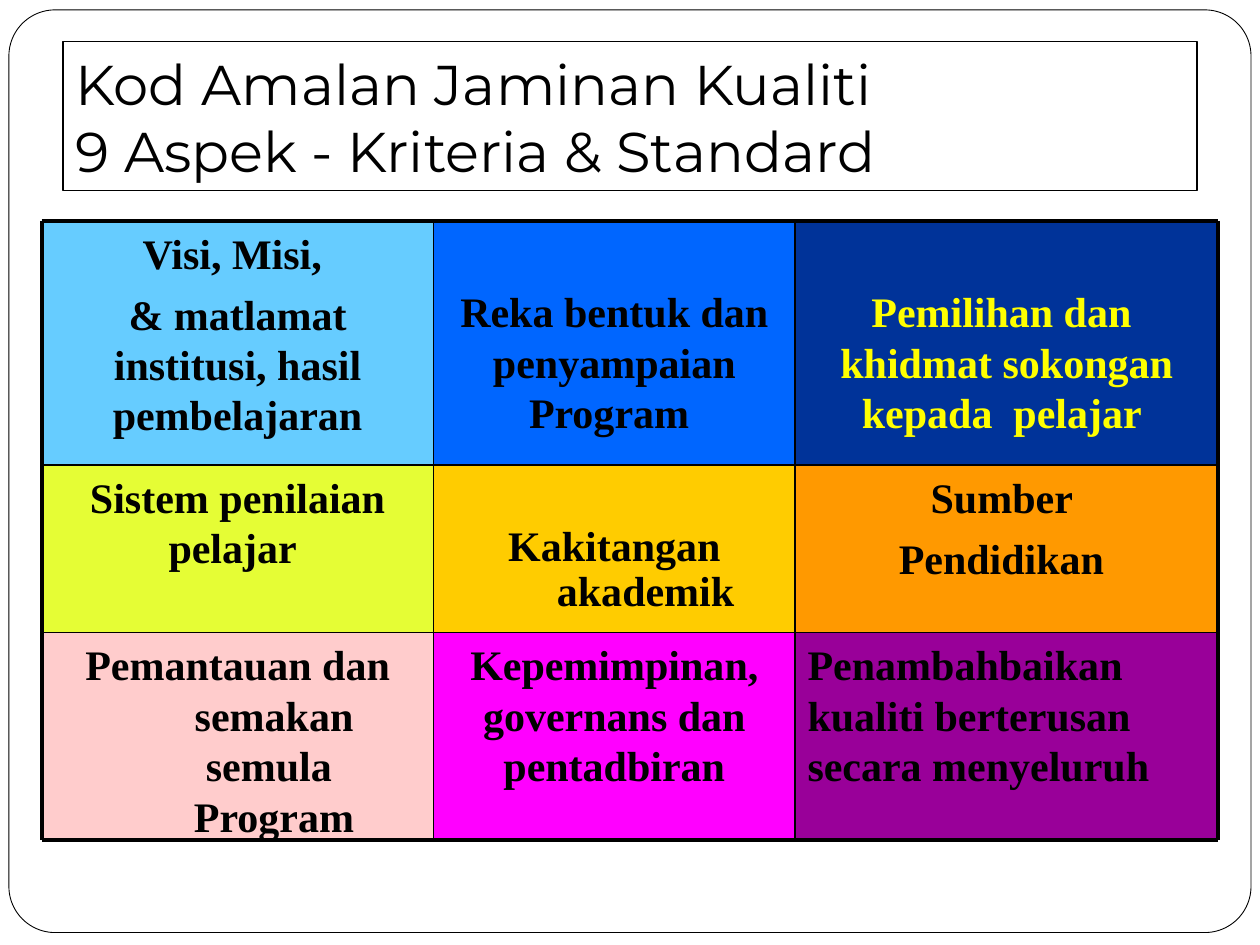
from pptx import Presentation
from pptx.dml.color import RGBColor
from pptx.enum.shapes import MSO_CONNECTOR as Connector, MSO_SHAPE as Shape
from pptx.enum.text import MSO_ANCHOR as Anchor, PP_ALIGN as Align
from pptx.oxml.ns import qn
from pptx.util import Cm, Pt
from lxml.etree import SubElement

COLOURS = {
    "white": "FFFFFF", "black": "000000", "yellow": "FFFF00",
    "sky": "66CCFF", "blue": "0066FF", "navy": "003399",
    "lime": "E5FD35", "gold": "FFCC00", "orange": "FF9900",
    "pink": "FFCCCC", "magenta": "FF00FF", "purple": "990099",
}


def colour(name):
    return RGBColor.from_string(COLOURS[name])


def write(box, lines, font, size, ink, align, bold=False):
    frame = box.text_frame
    frame.word_wrap = True
    frame.margin_left = frame.margin_right = Cm(0.25)
    frame.margin_top = frame.margin_bottom = Cm(0.13)
    frame.vertical_anchor = Anchor.TOP
    for index, line in enumerate(lines):
        para = frame.add_paragraph() if index else frame.paragraphs[0]
        para.text = line
        para.alignment = align
        para.font.name = font
        para.font.size = Pt(size)
        para.font.bold = bold
        para.font.color.rgb = colour(ink)
    return frame


deck = Presentation()
deck.slide_width, deck.slide_height = Cm(25.4), Cm(19.05)
page = deck.slides.add_slide(deck.slide_layouts[6])

border = page.shapes.add_shape(Shape.ROUNDED_RECTANGLE, Cm(0.18), Cm(0.2), Cm(25.04), Cm(18.6))
border.adjustments[0] = 0.05
border.shadow.inherit = False
border.fill.solid()
border.fill.fore_color.rgb = colour("white")
border.line.color.rgb = colour("black")
border.line.width = Pt(0.5)

title = page.shapes.add_textbox(Cm(1.27), Cm(0.84), Cm(22.86), Cm(3))
title.line.color.rgb = colour("black")
title.line.width = Pt(0.75)
title_frame = write(title, ["Kod Amalan Jaminan Kualiti \v9 Aspek - Kriteria & Standard"],
                    "Montserrat", 32, "black", Align.LEFT)
title_frame.vertical_anchor = Anchor.BOTTOM

column_edges = [0.84, 8.74, 16.03, 24.56]
row_edges = [4.45, 9.37, 12.75, 16.94]
aspects = [
    [("sky", ["Visi, Misi, ", "& matlamat institusi, hasil pembelajaran"], {}),
     ("blue", ["Reka bentuk dan penyampaian Program "], {"top": 1.31}),
     ("navy", ["Pemilihan dan  khidmat sokongan kepada  pelajar "], {"top": 1.31, "ink": "yellow"})],
    [("lime", ["Sistem penilaian pelajar "], {}),
     ("gold", ["Kakitangan akademik "], {"top": 1.21, "hanging": True, "spacing": 0.9}),
     ("orange", ["Sumber ", "Pendidikan "], {})],
    [("pink", ["Pemantauan dan semakan semula  Program"], {"hanging": True}),
     ("magenta", ["Kepemimpinan, governans dan pentadbiran"], {}),
     ("purple", ["Penambahbaikan", "kualiti berterusan", "secara menyeluruh"],
      {"align": Align.LEFT, "hanging": True, "before": 0})],
]

for row, cells in enumerate(aspects):
    for column, (fill, lines, style) in enumerate(cells):
        left, right = column_edges[column:column + 2]
        top, bottom = row_edges[row:row + 2]
        cell = page.shapes.add_shape(Shape.RECTANGLE, Cm(left), Cm(top),
                                     Cm(right - left), Cm(bottom - top))
        cell.shadow.inherit = False
        cell.fill.solid()
        cell.fill.fore_color.rgb = colour(fill)
        cell.line.fill.background()
        frame = write(cell, lines, "Times New Roman", 24, style.get("ink", "black"),
                      style.get("align", Align.CENTER), bold=True)
        frame.margin_top = Cm(style.get("top", 0.13))
        for para in frame.paragraphs:
            para.space_before = Pt(style.get("before", 6))
            para.line_spacing = style.get("spacing", 1.0)
            if style.get("hanging"):
                properties = para._p.get_or_add_pPr()
                properties.set("marL", str(Cm(1.47)))
                properties.set("indent", str(-Cm(1.47)))

rules = [(column_edges[0], y, column_edges[-1], y, y in (row_edges[0], row_edges[-1]))
         for y in row_edges]
rules += [(x, row_edges[0], x, row_edges[-1], x in (column_edges[0], column_edges[-1]))
          for x in column_edges]
for x1, y1, x2, y2, outer in rules:
    rule = page.shapes.add_connector(Connector.STRAIGHT, Cm(x1), Cm(y1), Cm(x2), Cm(y2))
    rule.line.color.rgb = colour("black")
    rule.line.width = Pt(2.25 if outer else 1)
    SubElement(rule._element.spPr, qn("a:effectLst"))

deck.save("out.pptx")
